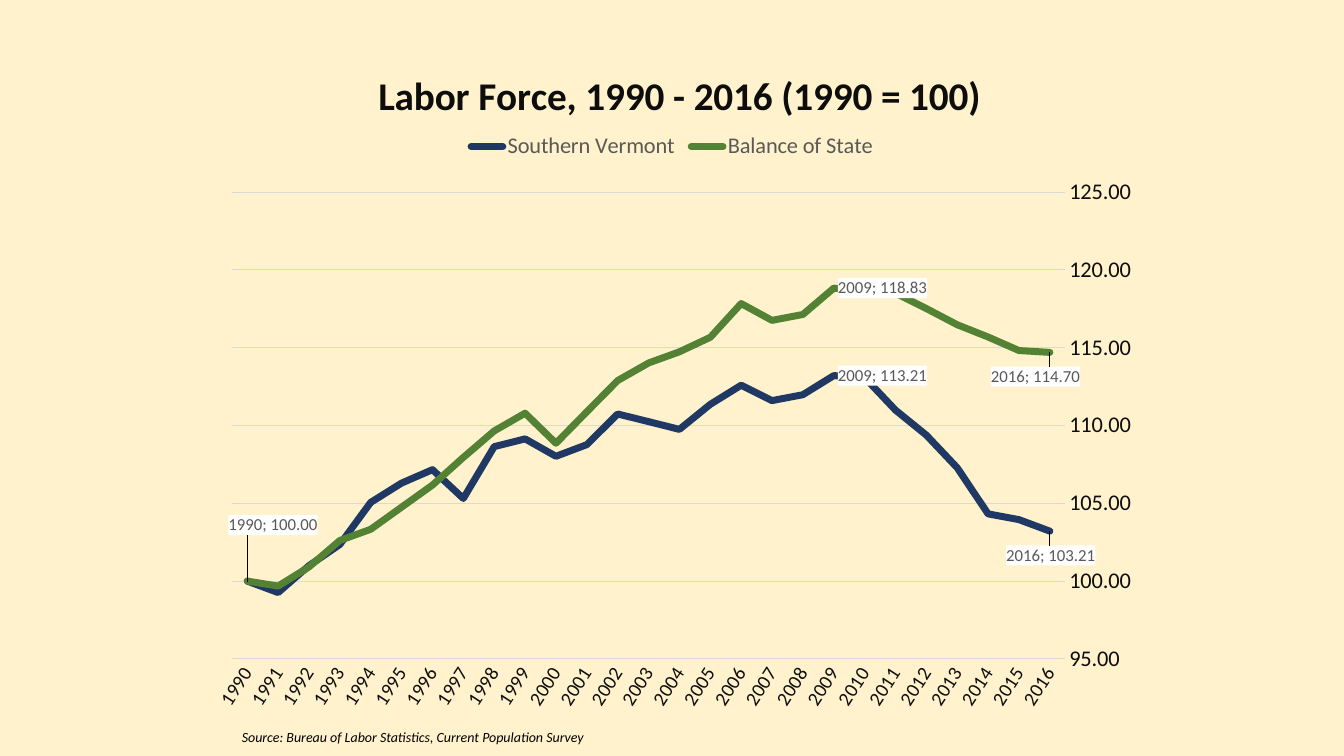
from lxml import etree
from pptx import Presentation
from pptx.chart.data import CategoryChartData
from pptx.dml.color import RGBColor
from pptx.enum import chart as ce, text as te
from pptx.oxml import parse_xml
from pptx.oxml.ns import nsdecls, qn
from pptx.util import Inches, Pt

CREAM = RGBColor(0xFF, 0xF2, 0xCC)
BLACK = RGBColor(0, 0, 0)
INK = RGBColor(0x0D, 0x0D, 0x0D)
GRAY = RGBColor(0x59, 0x59, 0x59)
RULE = RGBColor(0xD9, 0xD9, 0xD9)
NAVY = RGBColor(0x20, 0x38, 0x64)
GREEN = RGBColor(0x54, 0x82, 0x35)
FACE = "Calibri"

YEARS = [str(year) for year in range(2016, 1989, -1)]
SOUTH = [103.21, 103.95, 104.32, 107.28, 109.38, 110.99, 113.09, 113.21, 111.98,
         111.60, 112.59, 111.36, 109.75, 110.25, 110.74, 108.77, 108.02, 109.14,
         108.64, 105.31, 107.16, 106.30, 105.06, 102.35, 100.99, 99.26, 100]
STATE = [114.70, 114.82, 115.69, 116.48, 117.52, 118.51, 118.68, 118.83, 117.14,
         116.76, 117.84, 115.67, 114.74, 114.02, 112.89, 110.88, 108.86, 110.79,
         109.65, 107.95, 106.17, 104.75, 103.33, 102.61, 100.91, 99.68, 100]
# name, values, colour, and label shifts (x, y as shares of the chart) by year
LINES = [
    ("Southern Vermont", SOUTH, NAVY, {"2016": (-0.05, 0.035), "2009": (0, 0)}),
    ("Balance of State", STATE, GREEN,
     {"2016": (-0.066, 0.035), "2009": (0, 0), "1990": (-0.024, -0.081)}),
]
C15 = "http://schemas.microsoft.com/office/drawing/2012/chart"


def style(font, size, color, bold=False, italic=False):
    font.name, font.size = FACE, Pt(size)
    font.bold, font.italic = bold, italic
    font.color.rgb = color


def layout(x, y, w=None, h=None, edge=True, inner=False):
    """Return a manual chart layout; with edge off, x and y are shifts."""
    parts = [("layoutTarget", "inner")] if inner else []
    if edge:
        parts += [("xMode", "edge"), ("yMode", "edge")]
    parts += [("x", x), ("y", y)]
    if w:
        parts += [("w", w), ("h", h)]
    body = "".join(f'<c:{tag} val="{val}"/>' for tag, val in parts)
    return parse_xml(f'<c:layout {nsdecls("c")}><c:manualLayout>{body}'
                     "</c:manualLayout></c:layout>")


def place(node, after, box):
    """Give node its layout, behind the child named after (or first)."""
    for old in node.findall(qn("c:layout")):
        node.remove(old)
    if after:
        node.find(qn(after)).addnext(box)
    else:
        node.insert(0, box)


def flags(shown):
    return (f'<c:showLegendKey val="0"/><c:showVal val="{shown}"/>'
            f'<c:showCatName val="{shown}"/><c:showSerName val="0"/>'
            '<c:showPercent val="0"/><c:showBubbleSize val="0"/>')


def add_labels(line, shifts):
    """Label the chosen years on white, with leader lines to the points."""
    look = ('<c:numFmt formatCode="0.00" sourceLinked="0"/>'
            '<c:spPr><a:solidFill><a:srgbClr val="FFFFFF"/></a:solidFill>'
            '<a:ln><a:noFill/></a:ln></c:spPr>'
            '<c:txPr><a:bodyPr/><a:p><a:pPr><a:defRPr sz="1200" b="0">'
            f'<a:solidFill><a:srgbClr val="{GRAY}"/></a:solidFill>'
            f'<a:latin typeface="{FACE}"/></a:defRPr></a:pPr></a:p></c:txPr>'
            '<c:dLblPos val="r"/>')
    items = ""
    for year, (x, y) in shifts.items():
        spot = etree.tostring(layout(x, y, edge=False)).decode()
        items += (f'<c:dLbl><c:idx val="{YEARS.index(year)}"/>{spot}{look}'
                  f'{flags(1)}<c:separator>; </c:separator></c:dLbl>')
    tail = ('<c:extLst><c:ext uri="{CE6537A1-D6FC-4f65-9D91-7224C49458BB}" '
            f'xmlns:c15="{C15}"><c15:showLeaderLines val="1"/></c:ext></c:extLst>')
    block = parse_xml(f'<c:dLbls {nsdecls("c", "a")}>{items}{flags(0)}{tail}</c:dLbls>')
    line._element.find(qn("c:cat")).addprevious(block)


def format_axes(chart):
    years, scale = chart.category_axis, chart.value_axis
    for axis, size in ((years, 14), (scale, 16)):
        axis.major_tick_mark = axis.minor_tick_mark = ce.XL_TICK_MARK.NONE
        style(axis.tick_labels.font, size, INK)
    years.reverse_order = True
    years.format.line.color.rgb = RULE
    years.format.line.width = Pt(0.75)
    years._element.find(qn("c:txPr")).find(qn("a:bodyPr")).set("rot", "-3420000")
    scale.minimum_scale, scale.maximum_scale, scale.major_unit = 95, 125, 5
    scale.tick_labels.number_format = "0.00"
    scale.tick_labels.number_format_is_linked = False
    scale.format.line.fill.background()
    grid = scale.major_gridlines.format.line
    grid.color.rgb, grid.width = RULE, Pt(0.75)


def add_graph(slide, left, top, width, height):
    data = CategoryChartData(number_format="0.00")
    data.categories = YEARS
    for name, values, _, _ in LINES:
        data.add_series(name, values)
    chart = slide.shapes.add_chart(ce.XL_CHART_TYPE.LINE, left, top, width, height,
                                   data).chart
    style(chart.font, 10, BLACK)
    chart.has_title = True
    run = chart.chart_title.text_frame.paragraphs[0].add_run()
    run.text = "Labor Force, 1990 - 2016 (1990 = 100)"
    style(run.font, 28, INK, bold=True)
    chart.has_legend = True
    chart.legend.position = ce.XL_LEGEND_POSITION.TOP
    chart.legend.include_in_layout = False
    style(chart.legend.font, 16, GRAY)
    format_axes(chart)

    plot = chart.plots[0]
    plot.vary_by_categories = False
    for line, (_, _, color, shifts) in zip(plot.series, LINES):
        line.smooth = False
        line.marker.style = ce.XL_MARKER_STYLE.NONE
        line.format.line.color.rgb = color
        line.format.line.width = Pt(5)
        line._element.find(qn("c:spPr")).find(qn("a:ln")).set("cap", "rnd")
        add_labels(line, shifts)

    root = chart._chartSpace.find(qn("c:chart"))
    place(root.find(qn("c:title")), "c:tx", layout(0.185, 0.043))
    place(root.find(qn("c:legend")), "c:legendPos", layout(0.28, 0.14, 0.44, 0.05))
    place(root.find(qn("c:plotArea")), None,
          layout(0.039, 0.231, 0.873, 0.674, inner=True))


def add_source(slide, left, top, width, height):
    frame = slide.shapes.add_textbox(left, top, width, height).text_frame
    frame.word_wrap = True
    frame.auto_size = te.MSO_AUTO_SIZE.SHAPE_TO_FIT_TEXT
    run = frame.paragraphs[0].add_run()
    run.text = "Source: Bureau of Labor Statistics, Current Population Survey"
    style(run.font, 10, BLACK, italic=True)


def main():
    deck = Presentation()
    deck.slide_width, deck.slide_height = Inches(13.33), Inches(7.5)
    slide = deck.slides.add_slide(deck.slide_layouts[6])
    slide.background.fill.solid()
    slide.background.fill.fore_color.rgb = CREAM
    add_graph(slide, Inches(1.93), Inches(0.32), Inches(9.47), Inches(6.87))
    add_source(slide, Inches(2.3), Inches(7.18), Inches(6.75), Inches(0.27))
    deck.save("out.pptx")


if __name__ == "__main__":
    main()
